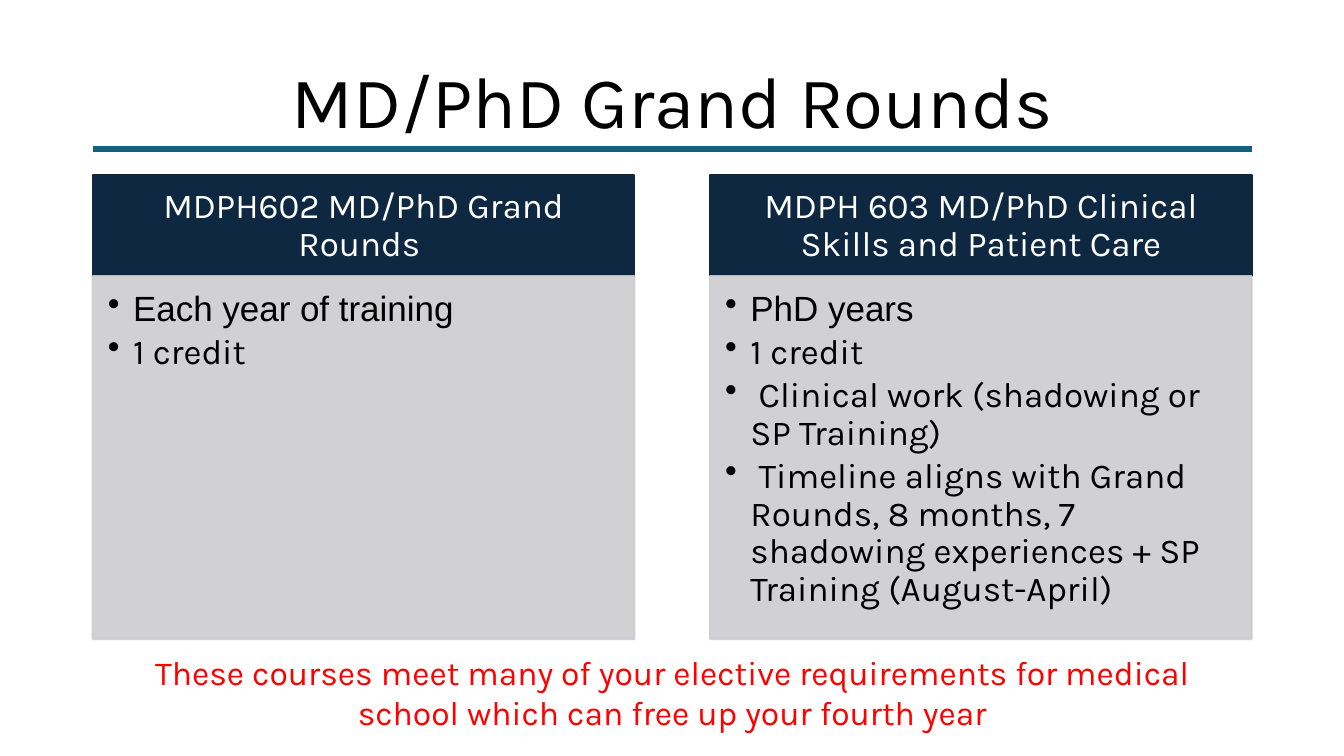
from lxml import etree
from pptx import Presentation
from pptx.dml.color import RGBColor
from pptx.enum import shapes, text
from pptx.oxml.ns import qn
from pptx.util import Pt

BLACK = RGBColor(0x00, 0x00, 0x00)
WHITE = RGBColor(0xFF, 0xFF, 0xFF)
NAVY = RGBColor(0x0E, 0x28, 0x41)
GRAY = RGBColor(0xCC, 0xCD, 0xCF)
BLUE = RGBColor(0x15, 0x60, 0x82)
RED = RGBColor(0xFF, 0x00, 0x00)

LEFT, WIDTH = 66.24, 828
COLUMN_WIDTH, COLUMN_STEP = 386.8, 441
HEADER_TOP, HEADER_HEIGHT = 125.3, 72
BODY_HEIGHT = 259.2

COURSES = [
    ("MDPH602 MD/PhD Grand Rounds ", ["Each year of training", "1 credit"]),
    ("MDPH 603 MD/PhD Clinical Skills and Patient Care", [
        "PhD years",
        "1 credit",
        " Clinical work (shadowing or SP Training)",
        " Timeline aligns with Grand Rounds, 8 months, 7 shadowing experiences"
        " + SP Training (August-April)",
    ]),
]


def write(shape, lines, size, color, align, anchor, margins, spacing=0.9, after=0):
    """Fill the shape with one paragraph per line; margins run left, top, right, bottom."""
    frame = shape.text_frame
    frame.word_wrap = True
    frame.vertical_anchor = anchor
    frame.margin_left, frame.margin_top, frame.margin_right, frame.margin_bottom = map(Pt, margins)
    frame.text = "\n".join(lines)
    for paragraph in frame.paragraphs:
        paragraph.alignment = align
        paragraph.line_spacing = spacing
        paragraph.space_after = Pt(after)
        paragraph.font.name = "Karla"
        paragraph.font.size = Pt(size)
        paragraph.font.color.rgb = color
    return frame.paragraphs


def add_panel(left, top, height, color):
    panel = slide.shapes.add_shape(shapes.MSO_SHAPE.RECTANGLE, Pt(left), Pt(top),
                                   Pt(COLUMN_WIDTH), Pt(height))
    panel.shadow.inherit = False
    panel.fill.solid()
    panel.fill.fore_color.rgb = color
    panel.line.color.rgb = color
    panel.line.width = Pt(1.5)
    return panel


presentation = Presentation()
presentation.slide_width, presentation.slide_height = Pt(960), Pt(540)
slide = presentation.slides.add_slide(presentation.slide_layouts[6])

CENTER, START = text.PP_ALIGN.CENTER, text.PP_ALIGN.LEFT
MIDDLE, TOP = text.MSO_ANCHOR.MIDDLE, text.MSO_ANCHOR.TOP
BOX_MARGINS = (7.2, 3.6, 7.2, 3.6)

title = slide.shapes.add_textbox(Pt(LEFT), Pt(30.24), Pt(WIDTH), Pt(89.3))
write(title, ["MD/PhD Grand Rounds"], 52, BLACK, CENTER, MIDDLE, BOX_MARGINS)

for column, (course, details) in enumerate(COURSES):
    left = LEFT + column * COLUMN_STEP
    header = add_panel(left, HEADER_TOP, HEADER_HEIGHT, NAVY)
    write(header, [course], 25, WHITE, CENTER, MIDDLE, (13.7, 7.9, 13.7, 7.9))

    body = add_panel(left, HEADER_TOP + HEADER_HEIGHT, BODY_HEIGHT, GRAY)
    for color in body._element.spPr.iter(qn("a:srgbClr")):
        etree.SubElement(color, qn("a:alpha"), val="90000")
    bullets = write(body, details, 25, BLACK, START, TOP, (10.8, 10.8, 13.7, 15.8), after=3.75)
    bullets[0].font.name = "Arial"
    for paragraph in bullets:
        properties = paragraph._p.get_or_add_pPr()
        properties.set("marL", str(Pt(18)))
        properties.set("indent", str(Pt(-18)))
        bullet = etree.Element(qn("a:buChar"), char="•")
        properties.find(qn("a:defRPr")).addprevious(bullet)

rule = slide.shapes.add_connector(shapes.MSO_CONNECTOR.STRAIGHT, Pt(LEFT), Pt(106.56),
                                  Pt(LEFT + WIDTH), Pt(106.56))
rule.line.color.rgb = BLUE
rule.line.width = Pt(4)
etree.SubElement(rule._element.spPr, qn("a:effectLst"))

footnote = slide.shapes.add_textbox(Pt(90.7), Pt(462.2), Pt(779), Pt(65.5))
write(footnote, ["These courses meet many of your elective requirements for medical school"
                 " which can free up your fourth year"],
      24, RED, CENTER, TOP, BOX_MARGINS, spacing=1.0)

presentation.save("out.pptx")
